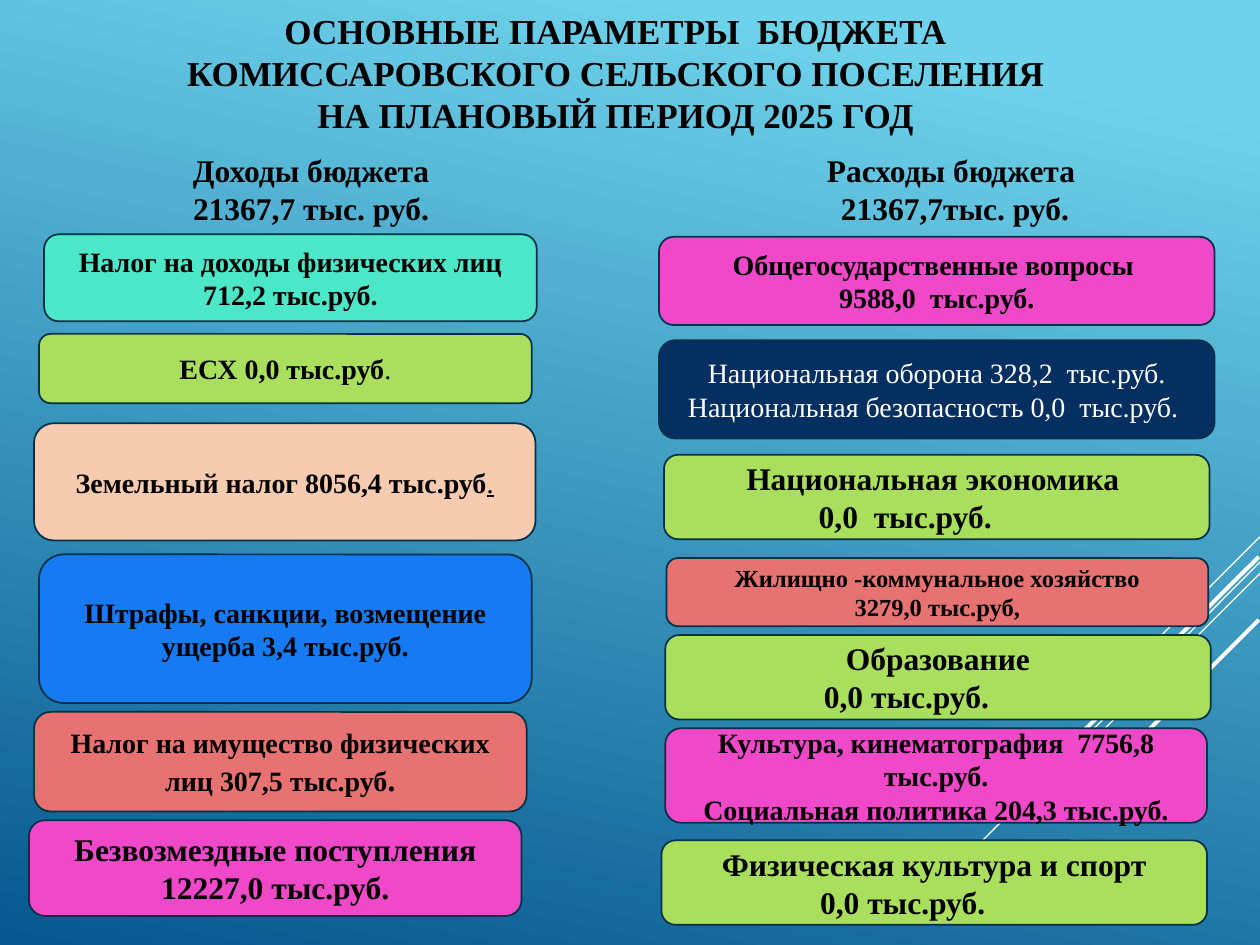
import pptx
import pptx.dml.color
import pptx.enum.shapes
import pptx.enum.text
import pptx.oxml
import pptx.util
from pptx.dml.color import RGBColor
from pptx.util import Inches

FONT = "Times New Roman"
BLACK = RGBColor(0x00, 0x00, 0x00)
WHITE = RGBColor(0xFF, 0xFF, 0xFF)
SKY = RGBColor(0x6E, 0xD2, 0xEB)
DEEP_BLUE = RGBColor(0x06, 0x58, 0x8E)
OUTLINE = RGBColor(0x04, 0x31, 0x48)
TURQUOISE = RGBColor(0x4B, 0xE7, 0xC8)
GREEN = RGBColor(0xAA, 0xDF, 0x5E)
PEACH = RGBColor(0xF6, 0xCB, 0xAF)
BLUE = RGBColor(0x16, 0x7B, 0xF3)
CORAL = RGBColor(0xE6, 0x72, 0x72)
PINK = RGBColor(0xEF, 0x48, 0xC9)
NAVY = RGBColor(0x05, 0x2F, 0x61)

TITLE = ["ОСНОВНЫЕ ПАРАМЕТРЫ  БЮДЖЕТА",
         "КОМИССАРОВСКОГО СЕЛЬСКОГО ПОСЕЛЕНИЯ",
         "НА ПЛАНОВЫЙ ПЕРИОД 2025 ГОД"]

# x1, y1, x2, y2, line width in points
STRIPES = [
    (10, 4.26, 9.17, 5.09, 0.75),
    (10, 4.46, 7.3, 7.17, 0.75),
    (10, 4.55, 8.28, 6.27, 0.75),
    (9.99, 4.42, 8.41, 5.99, 2.25),
    (9.99, 4.92, 8.85, 6.06, 2.25),
]

# left, top, width, height, fill, text size, paragraphs
INCOME = [
    (0.35, 1.86, 3.91, 0.69, TURQUOISE, 16,
     ["Налог на доходы физических лиц 712,2 тыс.руб."]),
    (0.31, 2.65, 3.91, 0.55, GREEN, 16, ["ЕСХ 0,0 тыс.руб"]),
    (0.27, 3.36, 3.98, 0.93, PEACH, 16, ["Земельный налог 8056,4 тыс.руб"]),
    (0.31, 4.4, 3.91, 1.18, BLUE, 16,
     ["Штрафы, санкции, возмещение ущерба 3,4 тыс.руб."]),
    (0.27, 5.65, 3.91, 0.79, CORAL, 16,
     ["Налог на имущество физических лиц 307,5 тыс.руб"]),
    (0.23, 6.51, 3.91, 0.76, PINK, 18,
     ["Безвозмездные поступления", "12227,0 тыс.руб."]),
]
EXPENSES = [
    (5.23, 1.88, 4.41, 0.7, PINK, 16,
     ["Общегосударственные вопросы ", "9588,0  тыс.руб."]),
    (5.23, 2.7, 4.41, 0.78, NAVY, 16,
     ["Национальная оборона 328,2  тыс.руб.",
      "Национальная безопасность 0,0  тыс.руб. "]),
    (5.27, 3.61, 4.33, 0.67, GREEN, 18,
     ["Национальная экономика ", "0,0  тыс.руб."]),
    (5.29, 4.43, 4.3, 0.54, CORAL, 14,
     ["Жилищно -коммунальное хозяйство", "3279,0 тыс.руб,"]),
    (5.28, 5.04, 4.33, 0.67, GREEN, 18, ["Образование", "0,0 тыс.руб."]),
    (5.28, 5.78, 4.3, 0.75, PINK, 16,
     ["Культура, кинематография  7756,8 тыс.руб.",
      "Социальная политика 204,3 тыс.руб."]),
    (5.25, 6.67, 4.33, 0.67, GREEN, 18,
     ["Физическая культура и спорт", "0,0 тыс.руб."]),
]


def paint_background(slide):
    fill = slide.background.fill
    fill.gradient()
    fill.gradient_angle = 258
    for stop, color, position in zip(fill.gradient_stops, (SKY, DEEP_BLUE), (0.1, 1)):
        stop.color.rgb = color
        stop.position = position


def add_stripe(slide, x1, y1, x2, y2, width):
    stripe = slide.shapes.add_connector(
        pptx.enum.shapes.MSO_CONNECTOR.STRAIGHT,
        Inches(x1), Inches(y1), Inches(x2), Inches(y2))
    stripe.line.color.rgb = WHITE
    stripe.line.width = pptx.util.Pt(width)
    properties = stripe._element.spPr
    properties.append(pptx.oxml.parse_xml(
        '<a:effectLst xmlns:a="http://schemas.openxmlformats.org/drawingml/2006/main"/>'))


def format_paragraph(paragraph, size, color=BLACK, bold=True):
    paragraph.alignment = pptx.enum.text.PP_ALIGN.CENTER
    font = paragraph.font
    font.name = FONT
    font.size = pptx.util.Pt(size)
    font.bold = bold
    font.color.rgb = color


def write_paragraphs(text_frame, lines, size, color=BLACK, bold=True):
    text_frame.word_wrap = True
    text_frame.text = "\n".join(lines)
    for paragraph in text_frame.paragraphs:
        format_paragraph(paragraph, size, color, bold)


def add_text_box(slide, left, top, width, height):
    text_box = slide.shapes.add_textbox(
        Inches(left), Inches(top), Inches(width), Inches(height))
    text_box.text_frame.word_wrap = True
    return text_box.text_frame


def add_title(slide):
    text_frame = add_text_box(slide, 0.47, 0.13, 8.83, 0.89)
    text_frame.vertical_anchor = pptx.enum.text.MSO_ANCHOR.MIDDLE
    paragraph = text_frame.paragraphs[0]
    format_paragraph(paragraph, 20)
    for index, line in enumerate(TITLE):
        if index:
            paragraph.add_line_break()
        paragraph.add_run().text = line


def add_budget_item(slide, left, top, width, height, fill, size, lines):
    """Draw a rounded box and return its last paragraph."""
    shape = slide.shapes.add_shape(
        pptx.enum.shapes.MSO_SHAPE.ROUNDED_RECTANGLE,
        Inches(left), Inches(top), Inches(width), Inches(height))
    shape.shadow.inherit = False
    shape.fill.solid()
    shape.fill.fore_color.rgb = fill
    shape.line.color.rgb = OUTLINE
    shape.line.width = pptx.util.Pt(1)
    text_frame = shape.text_frame
    text_frame.vertical_anchor = pptx.enum.text.MSO_ANCHOR.MIDDLE
    on_navy = fill == NAVY
    write_paragraphs(text_frame, lines, size, WHITE if on_navy else BLACK, not on_navy)
    return text_frame.paragraphs[-1]


def add_full_stop(paragraph):
    run = paragraph.add_run()
    run.text = "."
    return run.font


def indent_right(paragraph, indent):
    paragraph._p.get_or_add_pPr().set("marR", str(Inches(indent)))


def main():
    presentation = pptx.Presentation()
    presentation.slide_width = Inches(10)
    presentation.slide_height = Inches(7.5)
    slide = presentation.slides.add_slide(presentation.slide_layouts[6])
    paint_background(slide)
    for stripe in STRIPES:
        add_stripe(slide, *stripe)

    add_title(slide)
    write_paragraphs(add_text_box(slide, 0.31, 1.15, 4.38, 0.71),
                     ["Доходы бюджета ", "21367,7 тыс. руб. "], 18)
    write_paragraphs(add_text_box(slide, 5.55, 1.15, 4.06, 0.71),
                     ["Расходы бюджета ", "21367,7тыс. руб."], 18)

    income = [add_budget_item(slide, *item) for item in INCOME]
    add_full_stop(income[1]).bold = False
    land_tax_stop = add_full_stop(income[2])
    land_tax_stop.bold = False
    land_tax_stop.underline = True
    add_full_stop(income[4]).size = pptx.util.Pt(18)

    expenses = [add_budget_item(slide, *item) for item in EXPENSES]
    for index in (2, 4, 6):
        indent_right(expenses[index], 0.5)

    presentation.save("out.pptx")


if __name__ == "__main__":
    main()
